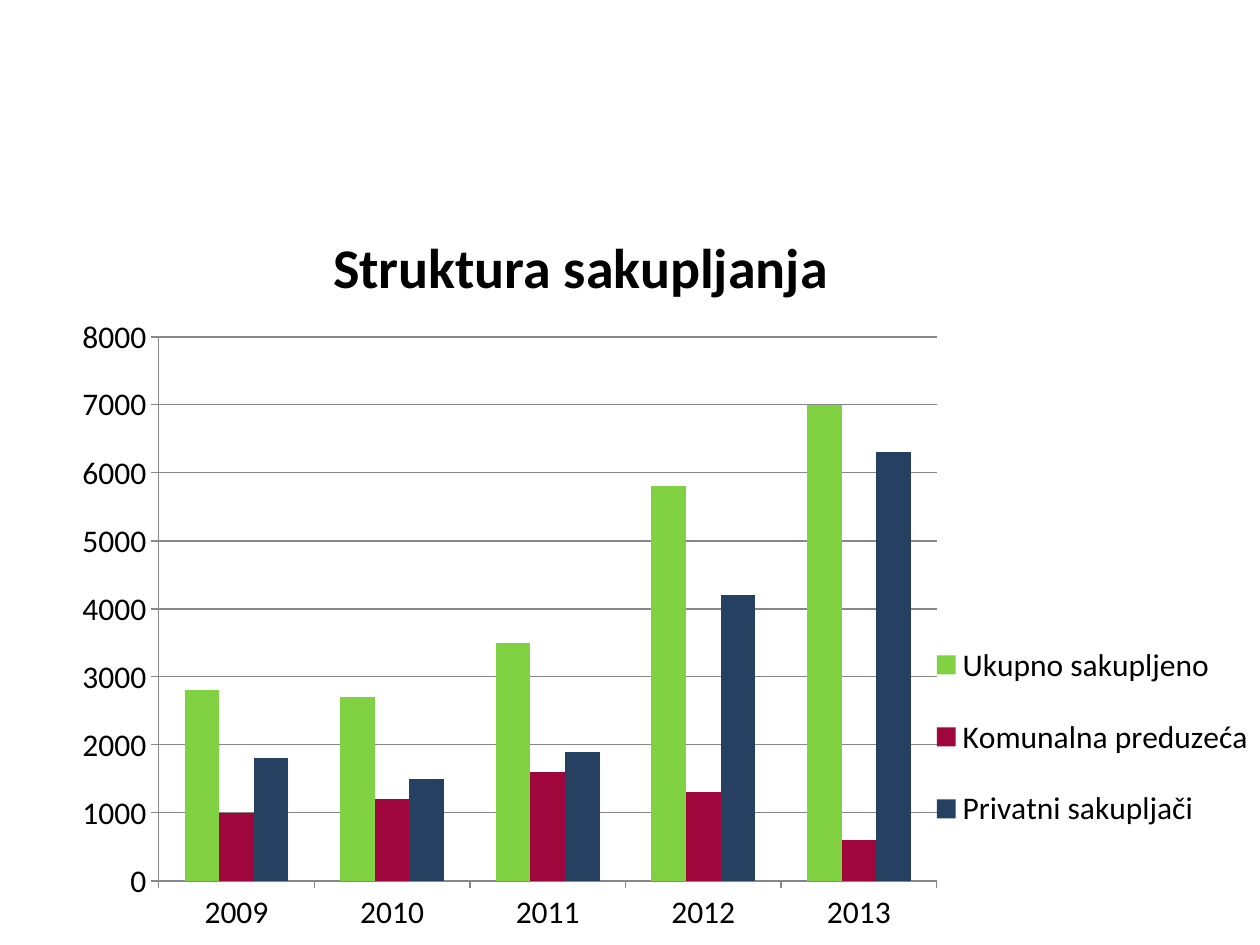
from lxml import etree
from pptx import Presentation
from pptx import util as u
from pptx.chart.data import CategoryChartData
from pptx.dml.color import RGBColor
from pptx.enum import chart as ch, text
from pptx.oxml.ns import qn

TITLE = "Struktura sakupljanja"
YEARS = ["2009", "2010", "2011", "2012", "2013"]
SERIES = [
    ("Ukupno sakupljeno", "80D242", (2800, 2700, 3500, 5800, 7000)),
    ("Komunalna preduzeća", "9E063C", (1000, 1200, 1600, 1300, 600)),
    ("Privatni sakupljači", "254061", (1800, 1500, 1900, 4200, 6300)),
]
FONT, INK, GREY = "Calibri", "000000", "878787"
PLOT = (0.08, 0.05, 0.65, 0.85)
LEGEND = (0.72, 0.48, 0.28, 0.39)


def style(font, size, bold=False):
    font.name, font.size, font.bold = FONT, u.Pt(size), bold
    font.color.rgb = RGBColor.from_string(INK)


def place(part, after, box, inner=False):
    """Give a chart part a fixed box, in fractions of the chart."""
    for old in part.findall(qn("c:layout")):
        part.remove(old)
    layout = etree.Element(qn("c:layout"))
    manual = etree.SubElement(layout, qn("c:manualLayout"))
    rows = [("layoutTarget", "inner")] if inner else []
    rows += [("xMode", "edge"), ("yMode", "edge"), *zip("xywh", box)]
    for tag, val in rows:
        etree.SubElement(manual, qn("c:" + tag)).set("val", str(val))
    part.find(qn(after)).addprevious(layout)


def add_title(slide):
    title = slide.shapes.title
    title.left, title.top = u.Inches(1.33), u.Inches(1.8)
    title.width, title.height = u.Inches(6.56), u.Inches(0.63)
    frame = title.text_frame
    frame.text = TITLE
    frame.vertical_anchor = text.MSO_ANCHOR.MIDDLE
    line = frame.paragraphs[0]
    line.alignment = text.PP_ALIGN.CENTER
    style(line.runs[0].font, 32, True)


def add_bars(slide):
    data = CategoryChartData()
    data.categories = YEARS
    for name, _, vals in SERIES:
        data.add_series(name, vals)
    box = [u.Inches(n) for n in (0.5, 2.42, 9.5, 5.08)]
    chart = slide.shapes.add_chart(
        ch.XL_CHART_TYPE.COLUMN_CLUSTERED, *box, data).chart
    style(chart.font, 18)
    chart.has_title = False

    plot = chart.plots[0]
    plot.gap_width, plot.overlap, plot.vary_by_categories = 150, 0, False
    for bar, (_, color, _) in zip(plot.series, SERIES):
        bar.format.fill.solid()
        bar.format.fill.fore_color.rgb = RGBColor.from_string(color)

    grid = chart.value_axis
    grid.minimum_scale, grid.maximum_scale, grid.major_unit = 0, 8000, 1000
    grid.has_major_gridlines = True
    for axis in (chart.category_axis, grid):
        axis.major_tick_mark = ch.XL_TICK_MARK.OUTSIDE
    for part in (chart.category_axis, grid, grid.major_gridlines):
        part.format.line.color.rgb = RGBColor.from_string(GREY)
        part.format.line.width = u.Pt(0.75)

    chart.has_legend = True
    legend = chart.legend
    legend.position = ch.XL_LEGEND_POSITION.RIGHT
    legend.include_in_layout = False
    style(legend.font, 18)
    area = chart.element.find(".//" + qn("c:plotArea"))
    place(area, "c:barChart", PLOT, inner=True)
    key = chart.element.find(".//" + qn("c:legend"))
    place(key, "c:overlay", LEGEND)


def main():
    deck = Presentation()
    deck.slide_width, deck.slide_height = u.Inches(10), u.Inches(7.5)
    slide = deck.slides.add_slide(deck.slide_layouts[5])
    add_title(slide)
    add_bars(slide)
    deck.save("out.pptx")


if __name__ == "__main__":
    main()
